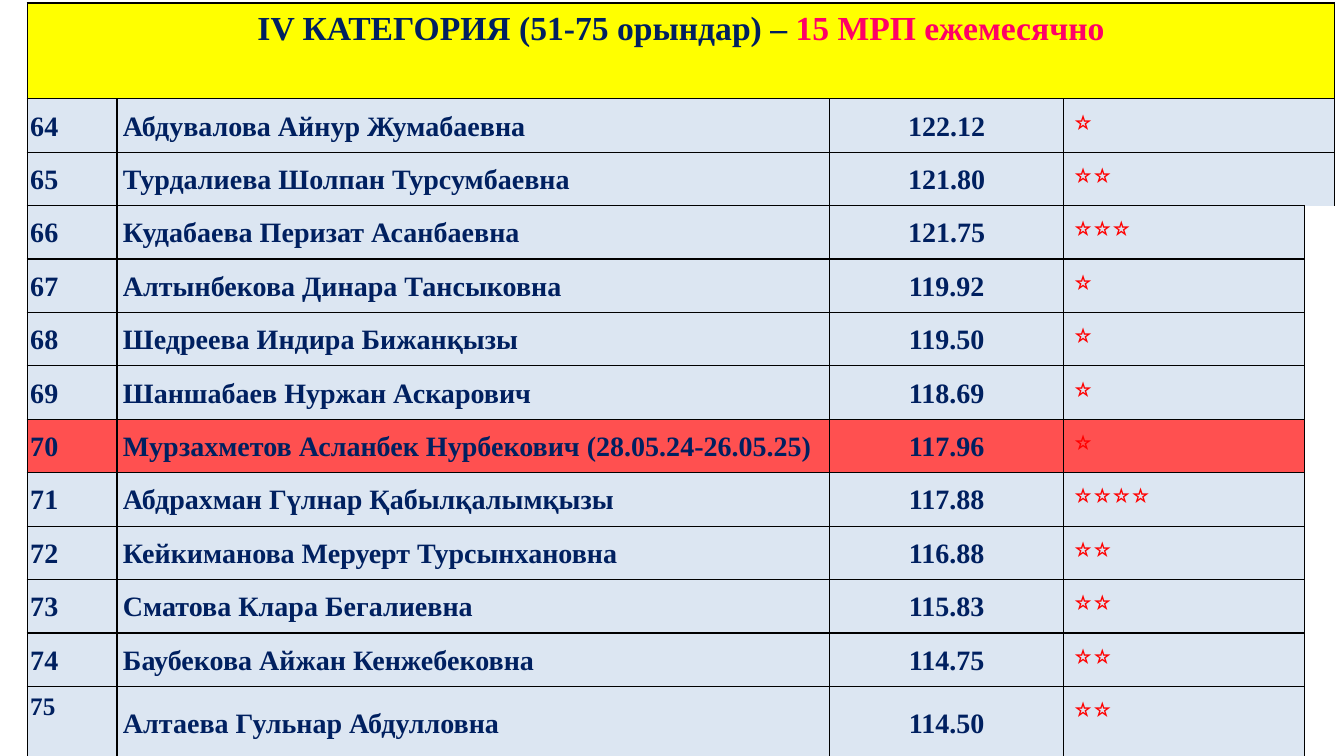
"""Build the slide with the ranked list of category IV."""
from lxml.etree import SubElement as Sub
from pptx import Presentation as Deck
from pptx.dml.color import RGBColor as Color
from pptx.enum.text import MSO_ANCHOR as Anchor, PP_ALIGN as Align
from pptx.oxml.ns import qn
from pptx.util import Inches, Pt

NAVY = Color(0x00, 0x20, 0x60)
PINK = Color(0xFF, 0x00, 0x66)
RED = Color(0xFF, 0x00, 0x00)
CORAL = Color(0xFF, 0x50, 0x50)
PALE = Color(0xDC, 0xE6, 0xF2)
GOLD = Color(0xFF, 0xFF, 0x00)
BLACK = Color(0x00, 0x00, 0x00)

FACE = "Times New Roman"
STAR = "⭐"
FIRST = 64
MARKED = 70
WIDTHS = [0.89, 7.07, 2.32, 2.39, 0.3]
HEAD, ROW, LAST = 0.95, 0.53, 0.72
PADS = [0.03, 0.06, 0.06, 0.1]
WIDE = 2

TITLE = [("ІV КАТЕГОРИЯ (51-75 орындар) – ", NAVY), ("15 МРП ежемесячно", PINK)]
PEOPLE = [
    ("Абдувалова Айнур Жумабаевна", "122.12", 1),
    ("Турдалиева Шолпан Турсумбаевна", "121.80", 2),
    ("Кудабаева Перизат Асанбаевна", "121.75", 3),
    ("Алтынбекова Динара Тансыковна", "119.92", 1),
    ("Шедреева Индира Бижанқызы", "119.50", 1),
    ("Шаншабаев Нуржан Аскарович", "118.69", 1),
    ("Мурзахметов Асланбек Нурбекович (28.05.24-26.05.25)", "117.96", 1),
    ("Абдрахман Гүлнар Қабылқалымқызы", "117.88", 4),
    ("Кейкиманова Меруерт Турсынхановна", "116.88", 2),
    ("Сматова Клара Бегалиевна", "115.83", 2),
    ("Баубекова Айжан Кенжебековна", "114.75", 2),
    ("Алтаева Гульнар Абдулловна", "114.50", 2),
]


def apply(item, values):
    """Set each attribute of item named in values."""
    for name, value in values.items():
        setattr(item, name, value)


def frame(cell, sides="LRTB"):
    """Draw black borders on the given sides and clear the others."""
    props = cell._tc.get_or_add_tcPr()
    for side in "LRTB":
        line = Sub(props, qn(f"a:ln{side}"), w=str(Pt(0.96)))
        if side in sides:
            paint = Sub(line, qn("a:solidFill"))
            Sub(paint, qn("a:srgbClr"), val=str(BLACK))
        else:
            Sub(line, qn("a:noFill"))


def fill(cell, color):
    """Fill a cell with one colour."""
    cell.fill.solid()
    cell.fill.fore_color.rgb = color


def write(cell, runs, pad, size=20, bold=True, align=Align.LEFT, anchor=Anchor.MIDDLE):
    """Write coloured runs into a cell."""
    apply(cell, {"margin_left": Inches(pad), "margin_right": Inches(pad),
                 "vertical_anchor": anchor})
    para = cell.text_frame.paragraphs[0]
    apply(para, {"alignment": align, "line_spacing": 1.07})
    for text, color in runs:
        run = para.add_run()
        run.text = text
        apply(run.font, {"name": FACE, "size": Pt(size), "bold": bold})
        run.font.color.rgb = color


def add_grid(slide):
    """Add the plain table with its row and column sizes."""
    heights = [HEAD] + [ROW] * (len(PEOPLE) - 1) + [LAST]
    shape = slide.shapes.add_table(
        len(heights), len(WIDTHS), Inches(0.27), Inches(0.03),
        Inches(sum(WIDTHS)), Inches(sum(heights)))
    table = shape.table
    apply(table, {"first_row": False, "horz_banding": False})
    for col, width in zip(table.columns, WIDTHS):
        col.width = Inches(width)
    for row, height in zip(table.rows, heights):
        row.height = Inches(height)
    return table


def add_head(table):
    """Fill the merged heading row."""
    cells = table.rows[0].cells
    cells[0].merge(cells[len(WIDTHS) - 1])
    for cell in cells:
        frame(cell)
        fill(cell, GOLD)
    write(cells[0], TITLE, PADS[0], size=24, align=Align.CENTER, anchor=Anchor.TOP)


def add_row(table, index, person):
    """Fill the row of one person."""
    name, score, stars = person
    rank = FIRST + index
    final = index == len(PEOPLE) - 1
    cells = table.rows[index + 1].cells
    tint = CORAL if rank == MARKED else PALE
    texts = [str(rank), name, score, STAR * stars]
    styles = [
        {"size": 18, "anchor": Anchor.TOP} if final else {},
        {},
        {"align": Align.CENTER},
        {"bold": False, "anchor": Anchor.TOP},
    ]
    merged = index < WIDE
    if merged:
        cells[3].merge(cells[4])
    for col, (text, pad, style) in enumerate(zip(texts, PADS, styles)):
        cell = cells[col]
        frame(cell, "LRT" if col == 3 and index == WIDE - 1 else "LRTB")
        fill(cell, tint)
        write(cell, [(text, RED if col == 3 else NAVY)], pad, **style)
    frame(cells[4], "R" if merged else "L")
    if merged:
        fill(cells[4], tint)
    else:
        cells[4].fill.background()


def main():
    """Build and save the deck."""
    deck = Deck()
    apply(deck, {"slide_width": Inches(13.33), "slide_height": Inches(7.5)})
    slide = deck.slides.add_slide(deck.slide_layouts[6])
    table = add_grid(slide)
    add_head(table)
    for index, person in enumerate(PEOPLE):
        add_row(table, index, person)
    deck.save("out.pptx")


if __name__ == "__main__":
    main()
